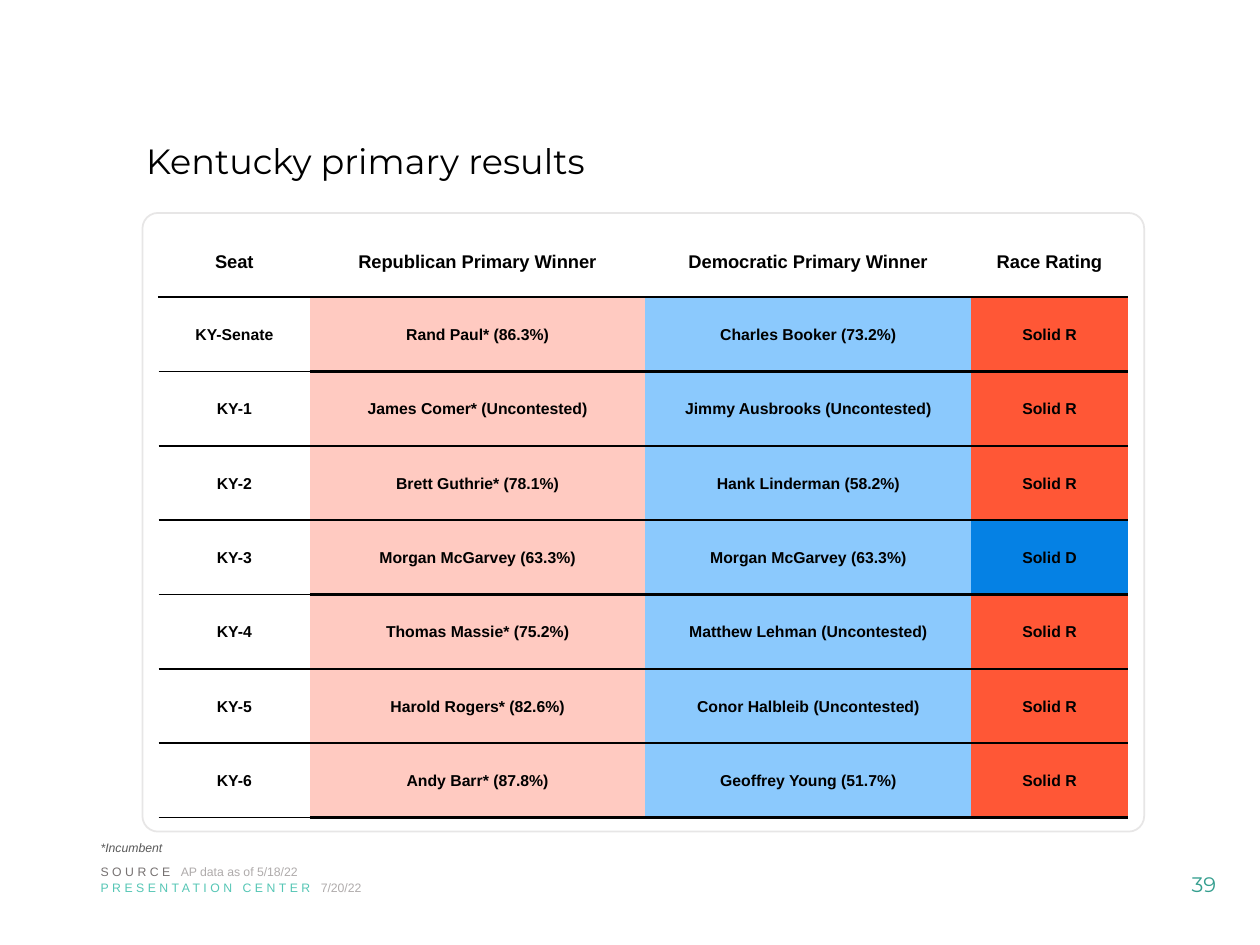
from lxml import etree
from pptx import Presentation
from pptx.dml.color import RGBColor
from pptx.enum.shapes import MSO_SHAPE
from pptx.enum.text import MSO_ANCHOR, PP_ALIGN
from pptx.oxml.ns import qn
from pptx.util import Pt

ROUNDED = MSO_SHAPE.ROUNDED_RECTANGLE
TOP, MIDDLE = MSO_ANCHOR.TOP, MSO_ANCHOR.MIDDLE
LEFT, CENTER = PP_ALIGN.LEFT, PP_ALIGN.CENTER

BLACK = RGBColor(0x00, 0x00, 0x00)
WHITE = RGBColor(0xFF, 0xFF, 0xFF)
CARD_LINE = RGBColor(0xE7, 0xE6, 0xE6)
PALE_RED = RGBColor(0xFF, 0xCA, 0xC1)
PALE_BLUE = RGBColor(0x8B, 0xC9, 0xFD)
SOLID_RED = RGBColor(0xFF, 0x57, 0x36)
SOLID_BLUE = RGBColor(0x05, 0x81, 0xE4)
TEAL = RGBColor(0x55, 0xC6, 0xB5)
DARK_TEAL = RGBColor(0x35, 0x9F, 0x8F)
NOTE_GRAY = RGBColor(0x59, 0x59, 0x59)
LABEL_GRAY = RGBColor(0x76, 0x71, 0x71)
DETAIL_GRAY = RGBColor(0xAF, 0xAB, 0xAB)

HEADERS = ("Seat", "Republican Primary Winner", "Democratic Primary Winner", "Race Rating")
RESULTS = (
    ("KY-Senate", "Rand Paul* (86.3%)", "Charles Booker (73.2%)", "Solid R"),
    ("KY-1", "James Comer* (Uncontested)", "Jimmy Ausbrooks (Uncontested)", "Solid R"),
    ("KY-2", "Brett Guthrie* (78.1%)", "Hank Linderman (58.2%)", "Solid R"),
    ("KY-3", "Morgan McGarvey (63.3%)", "Morgan McGarvey (63.3%)", "Solid D"),
    ("KY-4", "Thomas Massie* (75.2%)", "Matthew Lehman (Uncontested)", "Solid R"),
    ("KY-5", "Harold Rogers* (82.6%)", "Conor Halbleib (Uncontested)", "Solid R"),
    ("KY-6", "Andy Barr* (87.8%)", "Geoffrey Young (51.7%)", "Solid R"),
)
RATING_FILLS = {"Solid R": SOLID_RED, "Solid D": SOLID_BLUE}
COLUMN_WIDTHS = (86.4, 191.5, 186.5, 89.3)
HEADER_HEIGHT = 41


def set_attributes(target, values):
    """Set each named attribute of the target."""
    for name, value in values.items():
        setattr(target, name, value)


def add_run(paragraph, wording, color, size, spacing=0, face="Arial", **style):
    """Append a formatted run to the paragraph."""
    run = paragraph.add_run()
    run.text = wording
    set_attributes(run.font, {"name": face, "size": Pt(size), **style})
    run.font.color.rgb = color
    if spacing:
        run.font._element.set("spc", str(spacing * 100))


def add_line(slide, box, runs, align=LEFT, anchor=TOP):
    """Add a one-paragraph text box made of the given runs."""
    frame = slide.shapes.add_textbox(*map(Pt, box)).text_frame
    set_attributes(frame, {"word_wrap": True, "vertical_anchor": anchor})
    paragraph = frame.paragraphs[0]
    paragraph.alignment = align
    for run in runs:
        add_run(paragraph, **run)


def add_title(slide, box):
    """Place the slide title in its placeholder."""
    title = slide.shapes.title
    set_attributes(title, dict(zip(("left", "top", "width", "height"), map(Pt, box))))
    set_attributes(title.text_frame, {"word_wrap": True, "vertical_anchor": MIDDLE})
    paragraph = title.text_frame.paragraphs[0]
    set_attributes(paragraph, {"alignment": LEFT, "line_spacing": 0.9})
    add_run(paragraph, "Kentucky primary results", BLACK, 20, face="Montserrat")


def add_card(slide, box):
    """Draw the rounded panel behind the results."""
    card = slide.shapes.add_shape(ROUNDED, *map(Pt, box))
    card.adjustments[0] = 0.025
    card.shadow.inherit = False
    card.fill.solid()
    card.fill.fore_color.rgb = WHITE
    card.line.color.rgb = CARD_LINE
    card.line.width = Pt(1)


def set_borders(cell, borders):
    """Give the cell its left, right, top and bottom lines; None hides one."""
    properties = cell._tc.get_or_add_tcPr()
    for position, (side, border) in enumerate(zip("LRTB", borders)):
        line = etree.Element(qn(f"a:ln{side}"))
        if border is None:
            etree.SubElement(line, qn("a:noFill"))
        else:
            color, width = border
            line.set("w", str(Pt(width)))
            fill = etree.SubElement(line, qn("a:solidFill"))
            etree.SubElement(fill, qn("a:srgbClr")).set("val", str(color))
        properties.insert(position, line)


def fill_cell(cell, wording, size, color, borders):
    """Write and format one table cell."""
    set_attributes(cell, {
        "vertical_anchor": MIDDLE, "margin_left": Pt(0.7), "margin_right": Pt(0.7),
        "margin_top": Pt(0.7), "margin_bottom": Pt(0),
    })
    cell.fill.solid()
    cell.fill.fore_color.rgb = color
    paragraph = cell.text_frame.paragraphs[0]
    paragraph.alignment = CENTER
    add_run(paragraph, wording, BLACK, size, bold=True)
    set_borders(cell, borders)


def add_results(slide, box):
    """Build the table of primary winners by seat."""
    table = slide.shapes.add_table(
        len(RESULTS) + 1, len(HEADERS), *map(Pt, box)).table
    set_attributes(table, {"first_row": False, "horz_banding": False})
    for column, width in zip(table.columns, COLUMN_WIDTHS):
        column.width = Pt(width)
    row_height = (box[3] - HEADER_HEIGHT) / len(RESULTS)
    for index, row in enumerate(table.rows):
        row.height = Pt(row_height if index else HEADER_HEIGHT)

    hidden, heavy = (WHITE, 1), (BLACK, 1.5)
    for column, header in enumerate(HEADERS):
        fill_cell(table.cell(0, column), header, 10.5, WHITE,
                  (hidden, hidden, hidden, heavy))
    for row, result in enumerate(RESULTS, 1):
        fills = (WHITE, PALE_RED, PALE_BLUE, RATING_FILLS[result[-1]])
        for column, (wording, color) in enumerate(zip(result, fills)):
            rule = heavy if column else (BLACK, 1)
            above = heavy if row == 1 else rule
            fill_cell(table.cell(row, column), wording, 9, color,
                      (None, None, above, rule))


def add_footer(slide, box):
    """Place the note, the source lines and the page number."""
    left, top, width, height = box
    notes = (
        (0, [{"wording": "*Incumbent", "color": NOTE_GRAY, "size": 7, "italic": True}]),
        (13.7, [{"wording": "SOURCE ", "color": LABEL_GRAY, "size": 7, "spacing": 2},
                {"wording": "AP data as of 5/18/22", "color": DETAIL_GRAY, "size": 7}]),
        (23, [{"wording": "PRESENTATION CENTER ", "color": TEAL, "size": 7, "spacing": 2},
              {"wording": "7/20/22", "color": DETAIL_GRAY, "size": 7}]),
    )
    for offset, runs in notes:
        add_line(slide, (left, top + offset, 287, 15.8), runs)
    page = {"wording": "39", "color": DARK_TEAL, "size": 12, "face": "Montserrat"}
    add_line(slide, (left + width - 64, top + height - 28.8, 64, 28.8), [page],
             CENTER, MIDDLE)


def main():
    """Build and save the slide."""
    presentation = Presentation()
    set_attributes(presentation, {"slide_width": Pt(720), "slide_height": Pt(540)})
    slide = presentation.slides.add_slide(presentation.slide_layouts[5])
    add_title(slide, (76.3, 64.8, 578.2, 56.9))
    add_card(slide, (81.4, 121.7, 572.4, 353.5))
    add_results(slide, (90.7, 128.9, 553.7, 338.4))
    add_footer(slide, (50.4, 476.6, 669.6, 43.2))
    presentation.save("out.pptx")


if __name__ == "__main__":
    main()
